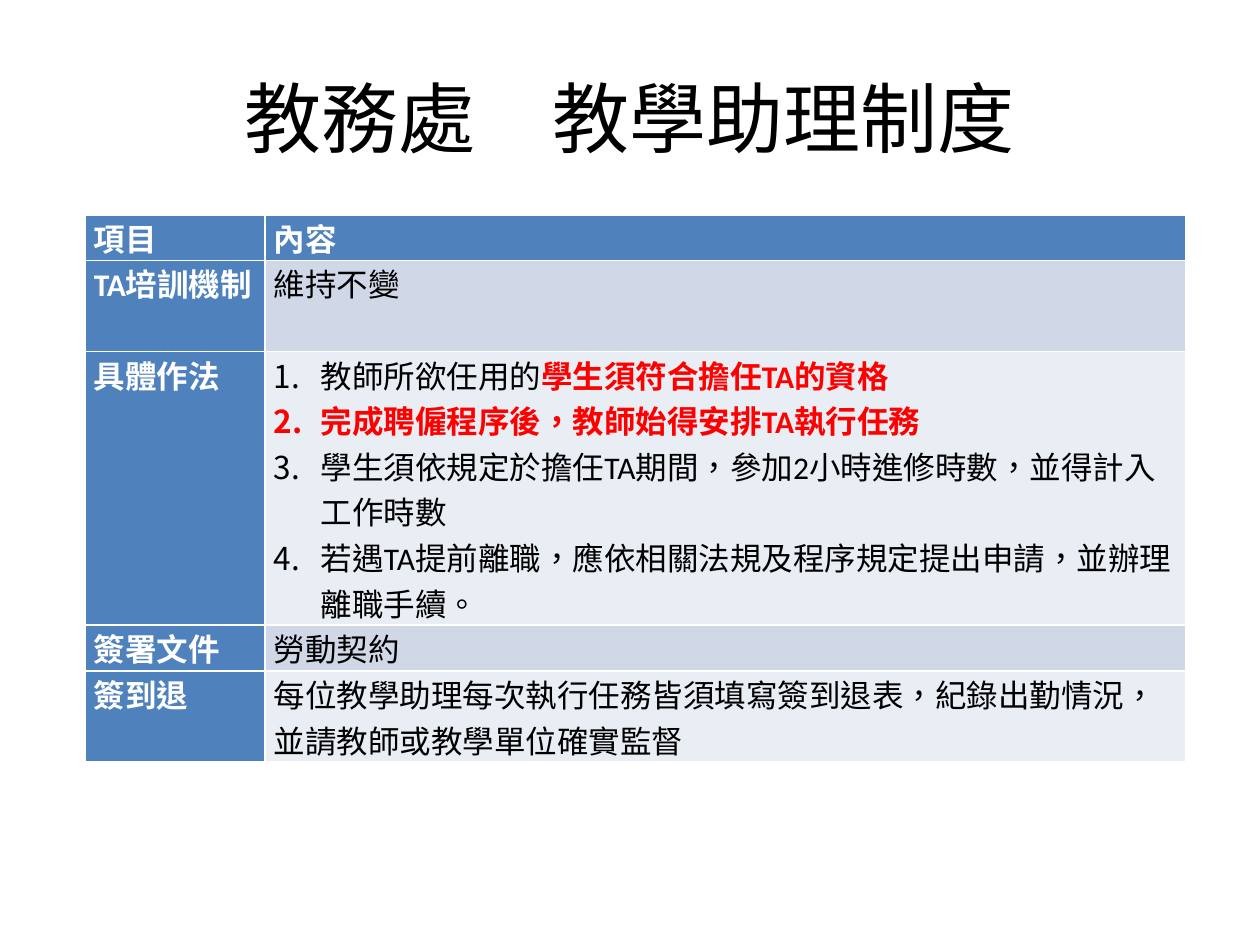
from lxml.etree import SubElement
from pptx import Presentation
from pptx.dml.color import RGBColor
from pptx.enum.lang import MSO_LANGUAGE_ID
from pptx.enum.text import MSO_ANCHOR, PP_ALIGN
from pptx.oxml.ns import qn
from pptx.util import Cm, Pt

BLACK = RGBColor(0x00, 0x00, 0x00)
WHITE = RGBColor(0xFF, 0xFF, 0xFF)
RED = RGBColor(0xFF, 0x00, 0x00)
BLUE = RGBColor(0x4F, 0x81, 0xBD)
BANDS = [RGBColor(0xE9, 0xED, 0xF4), RGBColor(0xD0, 0xD8, 0xE8)]


def add_run(paragraph, text, color, bold, size=18, font_name="Calibri"):
    run = paragraph.add_run()
    run.text = text
    run.font.name = font_name
    run.font.size = Pt(size)
    run.font.bold = bold
    run.font.color.rgb = color
    run.font.language_id = MSO_LANGUAGE_ID.TRADITIONAL_CHINESE


def number_paragraph(paragraph):
    properties = paragraph._p.get_or_add_pPr()
    properties.set("marL", str(Cm(0.95)))
    properties.set("indent", str(-Cm(0.95)))
    SubElement(properties, qn("a:buFont"), typeface="+mj-lt")
    SubElement(properties, qn("a:buAutoNum"), type="arabicPeriod")


presentation = Presentation()
presentation.slide_width = Cm(25.4)
presentation.slide_height = Cm(19.05)
slide = presentation.slides.add_slide(presentation.slide_layouts[5])

# Title
title = slide.shapes.title
title.left, title.top, title.width, title.height = Cm(1.27), Cm(0.76), Cm(22.86), Cm(3.18)
title.text_frame.vertical_anchor = MSO_ANCHOR.MIDDLE
paragraph = title.text_frame.paragraphs[0]
paragraph.alignment = PP_ALIGN.CENTER
add_run(paragraph, "教務處　教學助理制度", BLACK, False, 44, "Noto Sans CJK SC")

# Rows: label, then paragraphs of (text, highlighted) runs
rows = [
    ("項目", [[("內容", False)]]),
    ("TA培訓機制", [[("維持不變", False)]]),
    ("具體作法", [
        [("教師所欲任用的", False), ("學生須符合擔任TA的資格", True)],
        [("完成聘僱程序後，教師始得安排TA執行任務", True)],
        [("學生須依規定於擔任TA期間，參加2小時進修時數，並得計入工作時數", False)],
        [("若遇TA提前離職，應依相關法規及程序規定提出申請，並辦理離職手續。", False)],
    ]),
    ("簽署文件", [[("勞動契約", False)]]),
    ("簽到退", [[("每位教學助理每次執行任務皆須填寫簽到退表，紀錄出勤情況，"
               "並請教師或教學單位確實監督", False)]]),
]
row_heights = [0.79, 1.02, 3.81, 0.74, 1.55]
column_widths = [3.63, 18.57]

# Table
table = slide.shapes.add_table(len(rows), 2, Cm(1.71), Cm(4.33),
                               Cm(sum(column_widths)), Cm(sum(row_heights))).table
table.first_col = True
for column, width in zip(table.columns, column_widths):
    column.width = Cm(width)

for row_index, (label, content) in enumerate(rows):
    table.rows[row_index].height = Cm(row_heights[row_index])
    for column_index, paragraphs in enumerate([[[(label, False)]], content]):
        cell = table.cell(row_index, column_index)
        heading = row_index == 0 or column_index == 0
        cell.fill.solid()
        cell.fill.fore_color.rgb = BLUE if heading else BANDS[row_index % 2]
        cell.margin_left = cell.margin_right = Cm(0.18)
        cell.margin_top = cell.margin_bottom = 0
        for index, runs in enumerate(paragraphs):
            frame = cell.text_frame
            paragraph = frame.add_paragraph() if index else frame.paragraphs[0]
            if len(paragraphs) > 1:
                number_paragraph(paragraph)
            for text, highlighted in runs:
                color = RED if highlighted else WHITE if heading else BLACK
                add_run(paragraph, text, color, heading or highlighted)

presentation.save("out.pptx")
